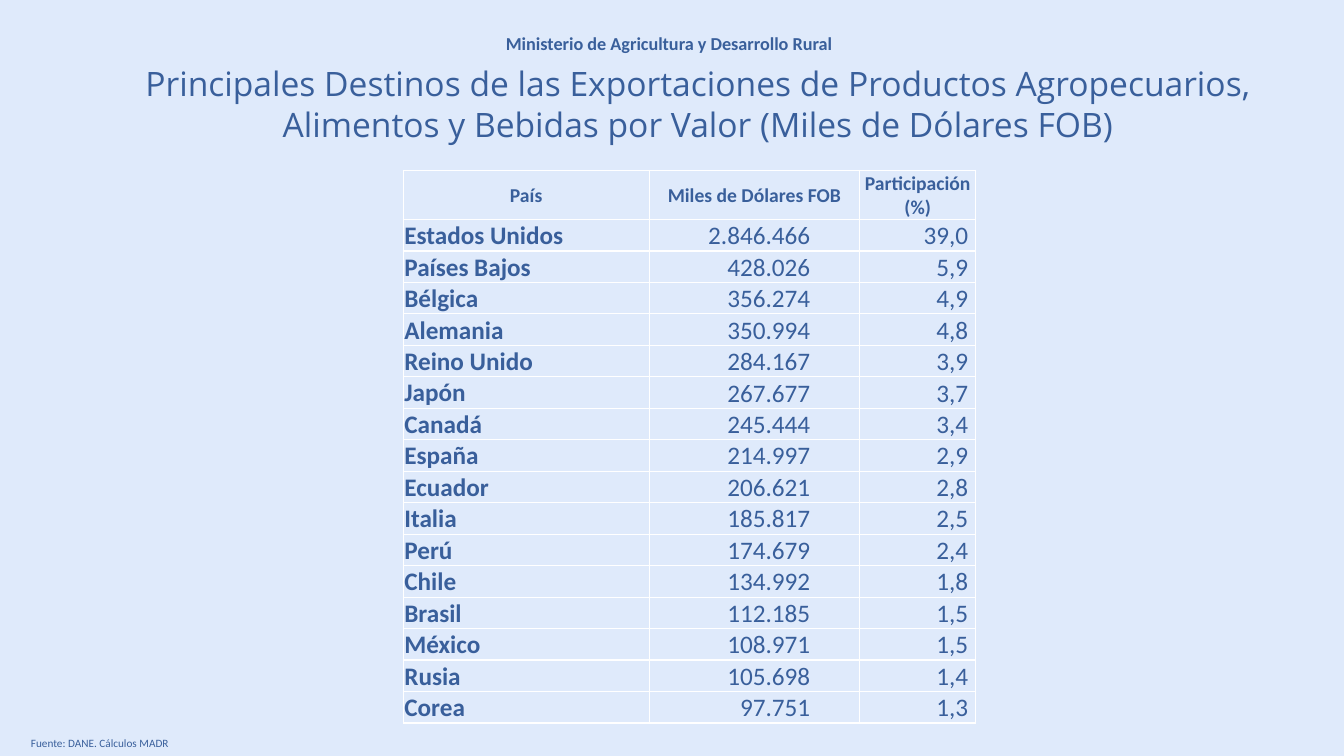
from dataclasses import dataclass

from pptx import Presentation
from pptx import util as u
from pptx.dml.color import RGBColor
from pptx.enum import text

COLORS = {"background": "DFEAFB", "ink": "395F9B"}


@dataclass
class Label:
    words: str
    left: float
    top: float
    width: float
    height: float
    size: int
    font: str = "Calibri"
    bold: bool = False
    wrap: bool = True
    align: text.PP_ALIGN = text.PP_ALIGN.LEFT


@dataclass
class Column:
    heading: str
    width: float
    align: text.PP_ALIGN
    anchor: text.MSO_ANCHOR
    right_margin: float
    bold: bool = False


@dataclass
class Destination:
    country: str
    value: str
    share: str


LABELS = [
    Label("Ministerio de Agricultura y Desarrollo Rural",
          12.5, 0.69, 8.86, 0.81, 13, bold=True, wrap=False),
    Label("Principales Destinos de las Exportaciones de Productos Agropecuarios, "
          "Alimentos y Bebidas por Valor (Miles de Dólares FOB)",
          1.6, 1.47, 31.98, 2.31, 24, font="Open Sans", align=text.PP_ALIGN.CENTER),
    Label("Fuente: DANE. Cálculos MADR",
          0.53, 18.42, 32.79, 0.61, 8, align=text.PP_ALIGN.JUSTIFY),
]

COLUMNS = [
    Column("País", 6.2, text.PP_ALIGN.LEFT, text.MSO_ANCHOR.BOTTOM, 0.03, bold=True),
    Column("Miles de Dólares FOB", 5.31, text.PP_ALIGN.RIGHT, text.MSO_ANCHOR.MIDDLE, 1.25),
    Column("Participación (%)", 2.92, text.PP_ALIGN.RIGHT, text.MSO_ANCHOR.MIDDLE, 0.19),
]

DESTINATIONS = [
    Destination("Estados Unidos", "2.846.466", "39,0"),
    Destination("Países Bajos", "428.026", "5,9"),
    Destination("Bélgica", "356.274", "4,9"),
    Destination("Alemania", "350.994", "4,8"),
    Destination("Reino Unido", "284.167", "3,9"),
    Destination("Japón", "267.677", "3,7"),
    Destination("Canadá", "245.444", "3,4"),
    Destination("España", "214.997", "2,9"),
    Destination("Ecuador", "206.621", "2,8"),
    Destination("Italia", "185.817", "2,5"),
    Destination("Perú", "174.679", "2,4"),
    Destination("Chile", "134.992", "1,8"),
    Destination("Brasil", "112.185", "1,5"),
    Destination("México", "108.971", "1,5"),
    Destination("Rusia", "105.698", "1,4"),
    Destination("Corea", "97.751", "1,3"),
]

TABLE_LEFT, TABLE_TOP = 10.16, 4.29
HEADER_HEIGHT, ROW_HEIGHT = 1.24, 0.79
CELL_MARGIN = 0.03


def style(paragraph, size: int, bold: bool, align: text.PP_ALIGN,
          font: str = "Calibri") -> None:
    paragraph.alignment = align
    paragraph.font.name = font
    paragraph.font.size = u.Pt(size)
    paragraph.font.bold = bold
    paragraph.font.color.rgb = RGBColor.from_string(COLORS["ink"])


def add_label(page, label: Label) -> None:
    box = page.shapes.add_textbox(u.Cm(label.left), u.Cm(label.top),
                                  u.Cm(label.width), u.Cm(label.height))
    frame = box.text_frame
    frame.word_wrap = label.wrap
    frame.auto_size = text.MSO_AUTO_SIZE.SHAPE_TO_FIT_TEXT
    frame.text = label.words
    style(frame.paragraphs[0], label.size, label.bold, label.align, label.font)


def fill_cell(cell, words: str, size: int, bold: bool, align: text.PP_ALIGN,
              anchor: text.MSO_ANCHOR, right_margin: float) -> None:
    cell.fill.background()
    cell.margin_left = cell.margin_top = u.Cm(CELL_MARGIN)
    cell.margin_right = u.Cm(right_margin)
    cell.margin_bottom = 0
    cell.vertical_anchor = anchor
    cell.text = words
    style(cell.text_frame.paragraphs[0], size, bold, align)


def add_destinations(page) -> None:
    heights = [HEADER_HEIGHT] + [ROW_HEIGHT] * len(DESTINATIONS)
    table = page.shapes.add_table(
        len(heights), len(COLUMNS), u.Cm(TABLE_LEFT), u.Cm(TABLE_TOP),
        u.Cm(sum(column.width for column in COLUMNS)), u.Cm(sum(heights))).table
    table.first_row = table.horz_banding = False
    for row, height in zip(table.rows, heights):
        row.height = u.Cm(height)
    for index, column in enumerate(COLUMNS):
        table.columns[index].width = u.Cm(column.width)
        fill_cell(table.cell(0, index), column.heading, 14, True,
                  text.PP_ALIGN.CENTER, text.MSO_ANCHOR.MIDDLE, CELL_MARGIN)
    for line, place in enumerate(DESTINATIONS, start=1):
        for index, words in enumerate((place.country, place.value, place.share)):
            column = COLUMNS[index]
            fill_cell(table.cell(line, index), words, 18, column.bold,
                      column.align, column.anchor, column.right_margin)


def main() -> None:
    deck = Presentation()
    deck.slide_width, deck.slide_height = u.Cm(33.87), u.Cm(19.05)
    page = deck.slides.add_slide(deck.slide_layouts[6])
    page.background.fill.solid()
    page.background.fill.fore_color.rgb = RGBColor.from_string(COLORS["background"])
    for label in LABELS:
        add_label(page, label)
    add_destinations(page)
    deck.save("out.pptx")


if __name__ == "__main__":
    main()
